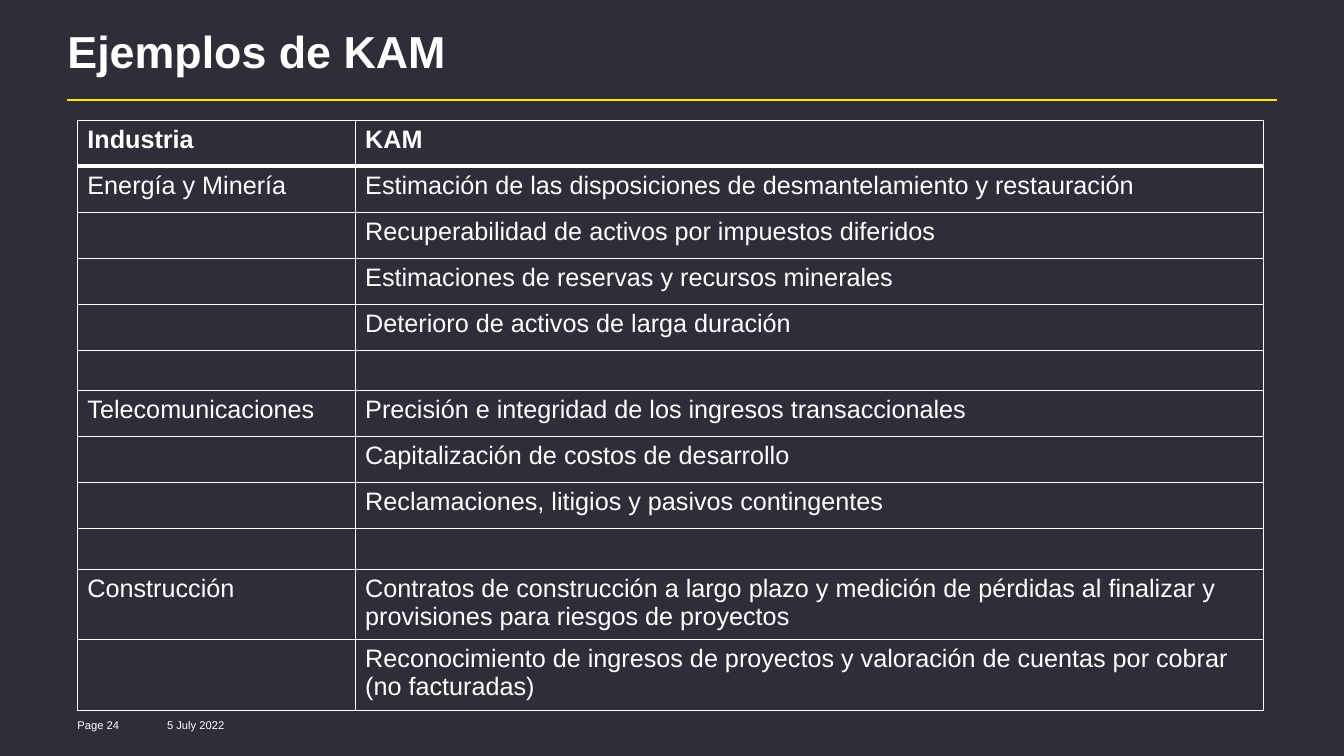
"""Builds the slide listing key audit matter examples by industry."""
from lxml import etree
from pptx import Presentation
from pptx import util as u
from pptx.dml.color import RGBColor
from pptx.enum import shapes, text
from pptx.oxml import ns

BACKGROUND = RGBColor(0x2E, 0x2E, 0x38)
WHITE = RGBColor(0xFF, 0xFF, 0xFF)
YELLOW = RGBColor(0xFF, 0xE6, 0x00)

KAM_BY_INDUSTRY = {
    "Energía y Minería": [
        "Estimación de las disposiciones de desmantelamiento y restauración",
        "Recuperabilidad de activos por impuestos diferidos",
        "Estimaciones de reservas y recursos minerales",
        "Deterioro de activos de larga duración",
    ],
    "Telecomunicaciones": [
        "Precisión e integridad de los ingresos transaccionales",
        "Capitalización de costos de desarrollo",
        "Reclamaciones, litigios y pasivos contingentes",
    ],
    "Construcción": [
        "Contratos de construcción a largo plazo y medición de pérdidas al finalizar y "
        "provisiones para riesgos de proyectos",
        "Reconocimiento de ingresos de proyectos y valoración de cuentas por cobrar "
        "(no facturadas)",
    ],
}


def table_rows():
    rows = [("Industria", "KAM")]
    for industry, matters in KAM_BY_INDUSTRY.items():
        if len(rows) > 1:
            rows.append(("", ""))
        rows += [("" if i else industry, matter) for i, matter in enumerate(matters)]
    return rows


def row_height(matter):
    if not matter:
        return u.Cm(0.97)
    return u.Cm(1.68 if len(matter) > 80 else 1.16)


class SlideBuilder:
    def __init__(self, presentation, font="Arial", color=WHITE):
        self.font = font
        self.color = color
        self.slide = presentation.slides.add_slide(presentation.slide_layouts[5])
        fill = self.slide.background.fill
        fill.solid()
        fill.fore_color.rgb = BACKGROUND

    def style(self, text_frame, size, bold=False):
        for paragraph in text_frame.paragraphs:
            for run in paragraph.runs:
                run.font.name = self.font
                run.font.size = u.Pt(size)
                run.font.bold = bold
                run.font.color.rgb = self.color

    def title(self, wording, left, top, width, height):
        shape = self.slide.shapes.title
        shape.left, shape.top, shape.width, shape.height = map(u.Cm, (left, top, width, height))
        frame = shape.text_frame
        frame.text = wording
        frame.auto_size = text.MSO_AUTO_SIZE.NONE
        frame.vertical_anchor = text.MSO_ANCHOR.TOP
        frame.margin_left = frame.margin_right = frame.margin_top = frame.margin_bottom = 0
        frame.paragraphs[0].alignment = text.PP_ALIGN.LEFT
        frame.paragraphs[0].line_spacing = 0.85
        self.style(frame, 32, bold=True)

    def rule(self, left, top, width):
        line = self.slide.shapes.add_connector(
            shapes.MSO_CONNECTOR.STRAIGHT, u.Cm(left), u.Cm(top), u.Cm(left + width), u.Cm(top))
        line.line.color.rgb = YELLOW
        line.line.width = u.Pt(1.5)
        etree.SubElement(line._element.spPr, ns.qn("a:effectLst"))

    def label(self, wording, left, top, width, height):
        shape = self.slide.shapes.add_textbox(*map(u.Cm, (left, top, width, height)))
        shape.text_frame.word_wrap = True
        shape.text_frame.text = wording
        self.style(shape.text_frame, 8)

    def borders(self, cell, **widths):
        properties = cell._tc.get_or_add_tcPr()
        for side in "LRTB":
            line = etree.SubElement(properties, ns.qn(f"a:ln{side}"), w=str(u.Pt(widths.get(side, 1))))
            fill = etree.SubElement(line, ns.qn("a:solidFill"))
            etree.SubElement(fill, ns.qn("a:srgbClr"), val=str(self.color))

    def table(self, rows, left, top, column_widths):
        heights = [row_height(matter) for _, matter in rows]
        table = self.slide.shapes.add_table(
            len(rows), len(column_widths), u.Cm(left), u.Cm(top),
            u.Cm(sum(column_widths)), sum(heights)).table
        table.horz_banding = False
        for column, width in zip(table.columns, column_widths):
            column.width = u.Cm(width)
        for i, (values, height) in enumerate(zip(rows, heights)):
            table.rows[i].height = height
            for cell, value in zip(table.rows[i].cells, values):
                cell.text = value
                self.style(cell.text_frame, 18, bold=i == 0)
                self.borders(cell, T=3 if i == 1 else 1, B=3 if i == 0 else 1)
                cell.fill.background()


def main():
    presentation = Presentation()
    presentation.slide_width = u.Cm(33.87)
    presentation.slide_height = u.Cm(19.05)
    builder = SlideBuilder(presentation)
    builder.rule(1.7, 2.51, 30.48)
    builder.title("Ejemplos de KAM", 1.7, 0.81, 27.56, 1.65)
    builder.label("5 July 2022", 3.96, 17.98, 3.3, 0.51)
    builder.label("Page 24", 1.7, 17.98, 1.83, 0.51)
    builder.table(table_rows(), 1.95, 3.03, (7, 22.89))
    presentation.save("out.pptx")


if __name__ == "__main__":
    main()
